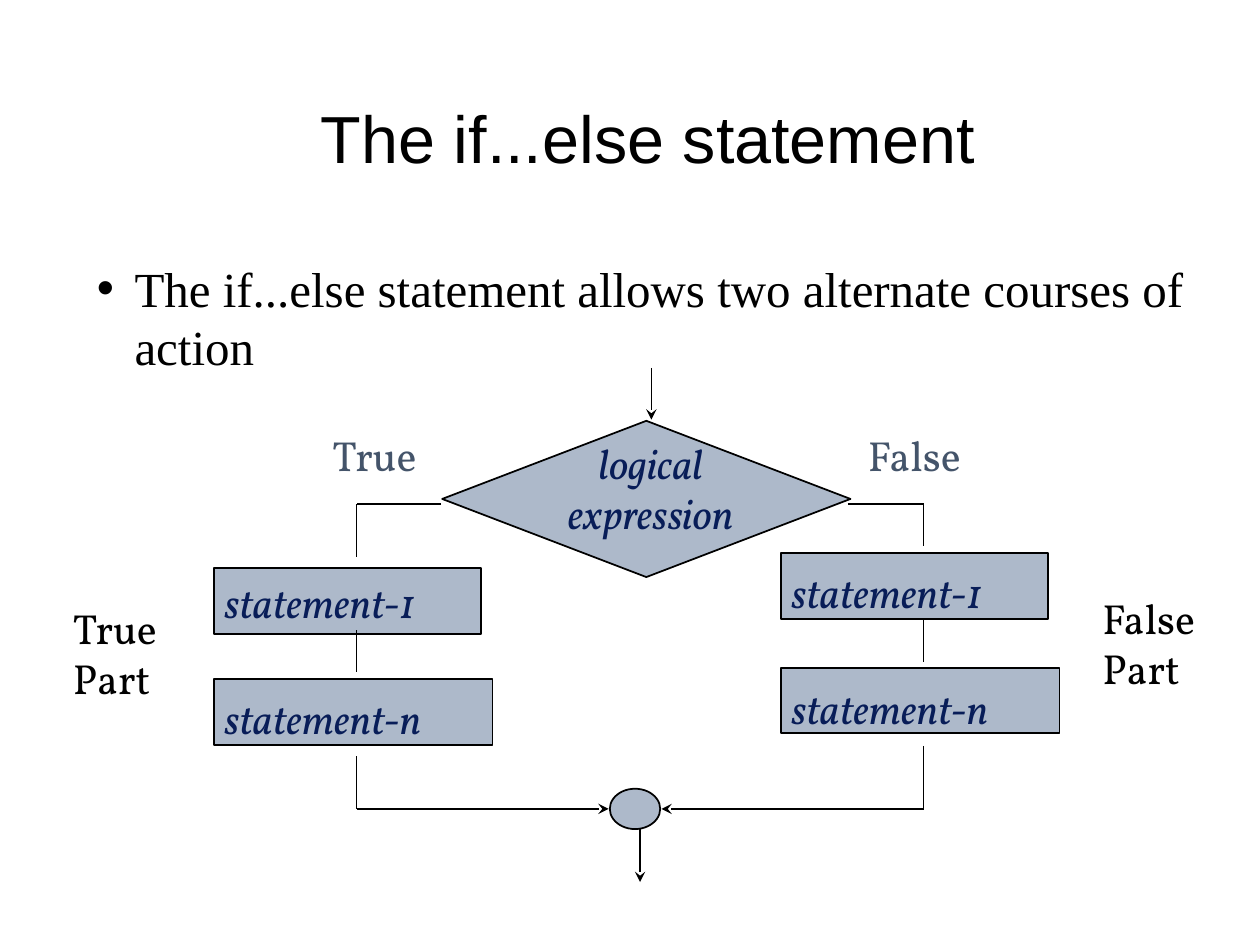
from pptx import Presentation
from pptx.dml.color import RGBColor
from pptx.enum.shapes import MSO_CONNECTOR, MSO_SHAPE
from pptx.enum.text import MSO_ANCHOR, PP_ALIGN
from pptx.oxml.ns import qn
from pptx.util import Emu, Pt
from lxml.etree import SubElement

PX = 9144  # 100 px to the inch
INK = {"black": "000000", "fill": "ADB9CA", "navy": "081D58", "slate": "44546A"}

deck = Presentation()
deck.slide_width, deck.slide_height = Emu(1000 * PX), Emu(750 * PX)
slide = deck.slides.add_slide(deck.slide_layouts[6])
shapes = slide.shapes


def write(box, lines, ink, size=24, face="Vollkorn", slant=False, align=PP_ALIGN.LEFT, wrap=True):
    frame = shapes.add_textbox(*[Emu(n * PX) for n in box]).text_frame
    frame.word_wrap = wrap
    frame.text = "\n".join(lines)
    for para in frame.paragraphs:
        para.alignment = align
        font = para.font
        font.size, font.name, font.italic = Pt(size), face, slant
        font.color.rgb = RGBColor.from_string(INK[ink])
    return frame


def link(x1, y1, x2, y2, arrow=False):
    line = shapes.add_connector(MSO_CONNECTOR.STRAIGHT, *[Emu(n * PX) for n in (x1, y1, x2, y2)])
    line.line.width = Pt(1)
    line.line.color.rgb = RGBColor.from_string(INK["black"])
    if arrow:
        SubElement(line.line._get_or_add_ln(), qn("a:tailEnd"), type="stealth")
    SubElement(line._element.spPr, qn("a:effectLst"))


# Title, set a little right of centre
title = write((69, 40, 862, 145), ["The if...else statement"], "black", 38, "Arial", align=PP_ALIGN.CENTER)
title.vertical_anchor = MSO_ANCHOR.MIDDLE
title.margin_left = Emu(39 * PX)
title.paragraphs[0].line_spacing = 0.9

# Bullet
body = write((67, 200, 893, 142), ["The if...else statement allows two alternate courses of action"],
             "black", 28, "Times New Roman")
point = body.paragraphs[0]
point.line_spacing, point.space_before = Pt(33.6), Pt(4)
props = point._p.get_or_add_pPr()
props.set("marL", str(30 * PX))
props.set("indent", str(-30 * PX))
SubElement(props, qn("a:buFont"), typeface="Arial")
SubElement(props, qn("a:buChar"), char="•")

# Filled shapes: decision, statements, join
for kind, box in [
    (MSO_SHAPE.DIAMOND, (351, 334, 324, 124)),
    (MSO_SHAPE.RECTANGLE, (170, 451, 212, 52)),
    (MSO_SHAPE.RECTANGLE, (170, 539, 221, 52)),
    (MSO_SHAPE.RECTANGLE, (620, 439, 212, 52)),
    (MSO_SHAPE.RECTANGLE, (620, 530, 221, 52)),
    (MSO_SHAPE.OVAL, (484, 626, 40, 32)),
]:
    shape = shapes.add_shape(kind, *[Emu(n * PX) for n in box])
    shape.shadow.inherit = False
    shape.fill.solid()
    shape.fill.fore_color.rgb = RGBColor.from_string(INK["fill"])
    shape.line.width = Pt(1)
    shape.line.color.rgb = RGBColor.from_string(INK["black"])

# Decision text
write((418, 342, 197, 90), ["logical", "expression"], "navy", slant=True, align=PP_ALIGN.CENTER)

# Branches: statement texts, branch label, part label
for name, left, top, tag, part in [
    ("True", 168, 453, 254, (48, 473, 90, 90)),
    ("False", 618, 445, 679, (865, 465, 95, 90)),
]:
    write((left, top, 206, 50), ["statement-1"], "navy", slant=True)
    write((left, top + 92, 217, 50), ["statement-n"], "navy", slant=True)
    write((tag, 336, 98, 50), [name], "slate")
    write(part, [name, "Part"], "black", wrap=False)

# Branch lines: out from the decision, down, and in to the join
for x, side, gaps, end in [
    (283, 350, [(400, 442), (500, 533), (600, 642)], 483),
    (733, 673, [(400, 433), (492, 525), (592, 642)], 525),
]:
    link(side, 400, x, 400)
    for top, foot in gaps:
        link(x, top, x, foot)
    link(x, 642, end, 642, arrow=True)

# Entry and exit
link(517, 292, 517, 333, arrow=True)
link(508, 658, 508, 700, arrow=True)

deck.save("out.pptx")
